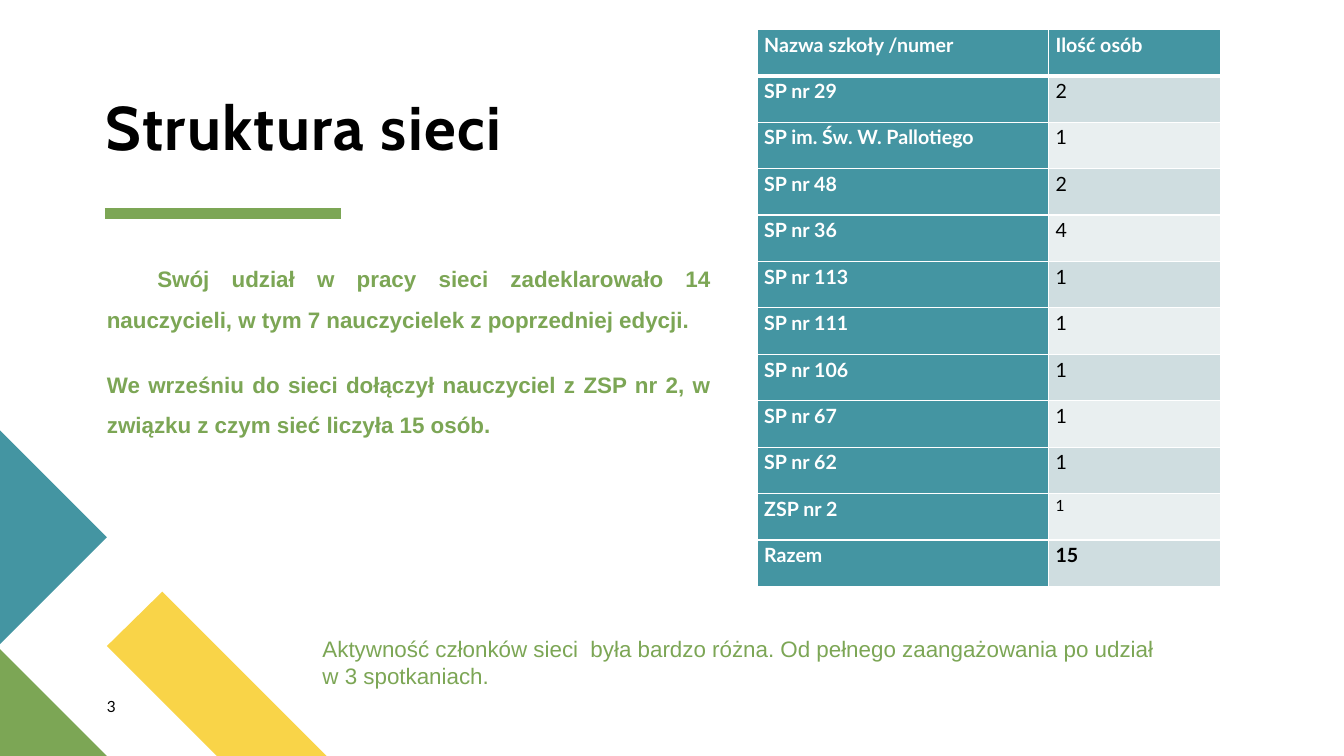
from lxml.etree import SubElement
from pptx import Presentation
from pptx.dml.color import RGBColor
from pptx.enum.shapes import MSO_CONNECTOR
from pptx.enum.text import MSO_ANCHOR, PP_ALIGN
from pptx.oxml.ns import qn
from pptx.util import Inches, Pt

TEAL, GREEN, YELLOW = "4495A2", "7CA655", "F9D448"
BLACK, WHITE = "000000", "FFFFFF"
BANDS = ("CFDDE0", "E9EFF0")

HEADER = ("Nazwa szkoły /numer", "Ilość osób")
SCHOOLS = [
    ("SP nr 29", 2),
    ("SP im. Św. W. Pallotiego", 1),
    ("SP nr 48", 2),
    ("SP nr 36", 4),
    ("SP nr 113", 1),
    ("SP nr 111", 1),
    ("SP nr 106", 1),
    ("SP nr 67", 1),
    ("SP nr 62", 1),
    ("ZSP nr 2", 1),
    ("Razem", 15),
]
DECLARATION = (
    "Swój udział w pracy sieci zadeklarowało 14 nauczycieli, "
    "w tym 7 nauczycielek z poprzedniej edycji."
)
NEWCOMER = (
    "We wrześniu do sieci dołączył nauczyciel z ZSP nr 2, "
    "w związku z czym sieć liczyła 15 osób."
)
ACTIVITY = (
    "Aktywność członków sieci  była bardzo różna. "
    "Od pełnego zaangażowania po udział w 3 spotkaniach."
)


def color(hex_code):
    return RGBColor.from_string(hex_code)


def write(paragraph, text, size=14, font="Lato", fill=BLACK, bold=False,
          align=PP_ALIGN.LEFT, line_spacing=1.0, before=0, after=0,
          indent=0, tracking=0):
    """Fill a paragraph; indent is in inches, tracking in points."""
    paragraph.alignment = align
    paragraph.line_spacing = line_spacing
    paragraph.space_before = Pt(before)
    paragraph.space_after = Pt(after)
    if indent:
        properties = paragraph._p.get_or_add_pPr()
        properties.set("marL", "0")
        properties.set("indent", str(Inches(indent)))
    run = paragraph.add_run()
    run.text = text
    run.font.size = Pt(size)
    run.font.name = font
    run.font.bold = bold
    run.font.color.rgb = color(fill)
    if tracking:
        run._r.get_or_add_rPr().set("spc", str(tracking * 100))


def add_text_frame(slide, left, top, width, height, margins=(0, 0),
                   anchor=MSO_ANCHOR.TOP):
    """Add a wrapping text box; margins are horizontal and vertical."""
    box = slide.shapes.add_textbox(
        Inches(left), Inches(top), Inches(width), Inches(height))
    frame = box.text_frame
    frame.word_wrap = True
    frame.vertical_anchor = anchor
    frame.margin_left = frame.margin_right = Inches(margins[0])
    frame.margin_top = frame.margin_bottom = Inches(margins[1])
    return frame


def add_polygon(slide, points, fill):
    corners = [(Inches(x), Inches(y)) for x, y in points]
    builder = slide.shapes.build_freeform(*corners[0])
    builder.add_line_segments(corners[1:], close=True)
    shape = builder.convert_to_shape()
    shape.shadow.inherit = False
    shape.fill.solid()
    shape.fill.fore_color.rgb = color(fill)
    shape.line.fill.background()


def add_rule(slide, left, right, y, width, fill):
    rule = slide.shapes.add_connector(
        MSO_CONNECTOR.STRAIGHT,
        Inches(left), Inches(y), Inches(right), Inches(y))
    rule.line.width = Pt(width)
    rule.line.color.rgb = color(fill)
    SubElement(rule._element.spPr, qn("a:effectLst"))


def set_borders(cell, **widths):
    """Draw white cell borders, widths in points by side: L, R, T, B."""
    properties = cell._tc.get_or_add_tcPr()
    for side, width in widths.items():
        line = SubElement(properties, qn(f"a:ln{side}"), w=str(Pt(width)))
        solid = SubElement(line, qn("a:solidFill"))
        SubElement(solid, qn("a:srgbClr"), val=WHITE)


def fill_cell(cell, text, background, top=1, bottom=1, **text_format):
    set_borders(cell, L=1, R=1, T=top, B=bottom)
    cell.fill.solid()
    cell.fill.fore_color.rgb = color(background)
    cell.margin_left = cell.margin_right = Inches(0.07)
    cell.margin_top = cell.margin_bottom = 0
    write(cell.text_frame.paragraphs[0], text, align=PP_ALIGN.JUSTIFY,
          line_spacing=1.15, after=8, **text_format)


def add_school_table(slide):
    row_count = len(SCHOOLS) + 1
    table = slide.shapes.add_table(
        row_count, 2, Inches(7.51), Inches(0.29),
        Inches(4.6), Inches(5.53)).table
    for column, width in zip(table.columns, (2.89, 1.71)):
        column.width = Inches(width)
    for column, label in enumerate(HEADER):
        fill_cell(table.cell(0, column), label, TEAL, bottom=3,
                  fill=WHITE, bold=True)
    for row, (school, people) in enumerate(SCHOOLS, start=1):
        top = 3 if row == 1 else 1
        fill_cell(table.cell(row, 0), school, TEAL, top=top,
                  fill=WHITE, bold=True)
        fill_cell(table.cell(row, 1), str(people), BANDS[(row - 1) % 2],
                  top=top, bold=school == "Razem",
                  size=11 if school == "ZSP nr 2" else 14)


def add_decoration(slide):
    add_polygon(slide, [(3.24, 7.5), (2.15, 7.5), (1.06, 6.41),
                        (1.61, 5.87)], YELLOW)
    add_polygon(slide, [(1.06, 7.5), (0, 7.5), (0, 6.44)], GREEN)
    add_polygon(slide, [(0, 4.27), (1.06, 5.33), (0, 6.39)], TEAL)
    add_rule(slide, 1.04, 3.38, 2.12, 8, GREEN)


def add_body(slide):
    frame = add_text_frame(slide, 1.06, 2.5, 5.99, 3.06)
    style = dict(size=16, font="Arial", fill=GREEN, bold=True,
                 align=PP_ALIGN.JUSTIFY, line_spacing=1.5,
                 before=10, after=8)
    write(frame.paragraphs[0], DECLARATION, indent=0.5, **style)
    write(frame.add_paragraph(), NEWCOMER, **style)


def main():
    presentation = Presentation()
    presentation.slide_width = Inches(13.33)
    presentation.slide_height = Inches(7.5)
    slide = presentation.slides.add_slide(presentation.slide_layouts[6])

    add_decoration(slide)
    title = add_text_frame(slide, 1.05, 0.96, 5.4, 0.67,
                           anchor=MSO_ANCHOR.BOTTOM)
    write(title.paragraphs[0], "Struktura sieci", size=44, font="Cabin",
          bold=True, line_spacing=0.9, tracking=1)
    add_body(slide)
    page_number = add_text_frame(slide, 1.06, 6.92, 0.57, 0.27)
    write(page_number.paragraphs[0], "3", size=11)
    add_school_table(slide)
    activity = add_text_frame(slide, 3.1, 6.25, 8.55, 0.94,
                              margins=(0.1, 0.05))
    write(activity.paragraphs[0], ACTIVITY, size=16, font="Arial", fill=GREEN)

    presentation.save("out.pptx")


if __name__ == "__main__":
    main()
